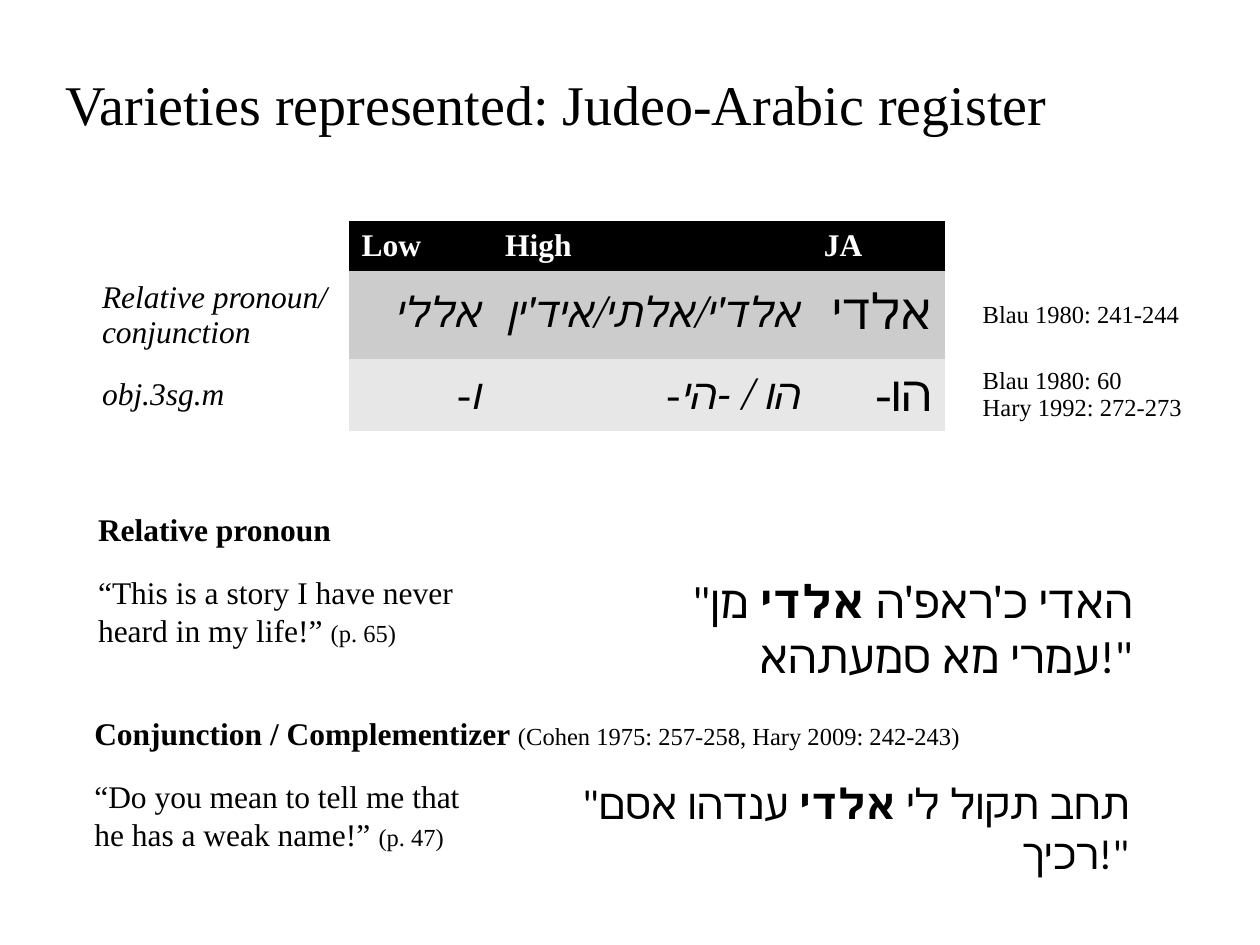
"""Build a slide on Judeo-Arabic register with a form table and two glossed examples."""
from pptx import Presentation
from pptx.dml.color import RGBColor
from pptx.enum import text
from pptx.util import Inches, Pt

BLACK = RGBColor(0x00, 0x00, 0x00)
WHITE = RGBColor(0xFF, 0xFF, 0xFF)
ROW_FILLS = [BLACK, RGBColor(0xCC, 0xCC, 0xCC), RGBColor(0xE7, 0xE7, 0xE7)]
SERIF, HEBREW = "Times New Roman", "Calibri"
LEFT, RIGHT = text.PP_ALIGN.LEFT, text.PP_ALIGN.RIGHT
NO_GRID_STYLE = "{2D5ABB26-0587-4C30-8999-92F81FD0307C}"

COLUMN_WIDTHS = [2.06, 1.14, 2.53, 1.06, 2.08]
ROW_HEIGHTS = [0.4, 0.7, 0.57]
FORMS = [
    ["", "Low", "High", "JA", ""],
    ["Relative pronoun/\nconjunction", "אללי", "אלד'י/אלתי/איד'ין", "אלדי", "Blau 1980: 241-244"],
    ["obj.3sg.m", "-ו", "-הו / -הי", "-הו", "Blau 1980: 60\nHary 1992: 272-273"],
]
COLUMN_STYLES = [
    dict(size=18, italic=True),
    dict(size=24, italic=True, align=RIGHT),
    dict(size=24, italic=True, align=RIGHT),
    dict(size=28, align=RIGHT),
    dict(size=14, indent=0.2),
]
HEADER_STYLE = dict(size=18, bold=True, color=WHITE)


def style_paragraph(paragraph, size, name=SERIF, bold=False, italic=False,
                    color=BLACK, align=LEFT, indent=0):
    """Set the shared font, alignment and left indent of a paragraph."""
    font = paragraph.font
    font.name, font.size, font.bold, font.italic = name, Pt(size), bold, italic
    font.color.rgb = color
    paragraph.alignment = align
    if indent:
        paragraph._p.get_or_add_pPr().set("marL", str(Inches(indent)))


def add_text(shapes, box, parts, **style):
    """Add a wrapping text box; each part is (text, size or None, bold or None)."""
    frame = shapes.add_textbox(*map(Inches, box)).text_frame
    frame.word_wrap = True
    frame.auto_size = text.MSO_AUTO_SIZE.SHAPE_TO_FIT_TEXT
    paragraph = frame.paragraphs[0]
    style_paragraph(paragraph, **style)
    for wording, size, bold in parts:
        run = paragraph.add_run()
        run.text = wording
        if size:
            run.font.size = Pt(size)
        if bold is not None:
            run.font.bold = bold


def fill_cell(cell, wording, style, fill):
    """Write a table cell, one paragraph a line, on its fill."""
    cell.vertical_anchor = text.MSO_ANCHOR.MIDDLE
    if fill is None:
        cell.fill.background()
    else:
        cell.fill.solid()
        cell.fill.fore_color.rgb = fill
    cell.text_frame.text = wording
    for paragraph in cell.text_frame.paragraphs:
        style_paragraph(paragraph, **style)


def add_forms_table(shapes):
    """Add the table of low, high and Judeo-Arabic forms."""
    forms = shapes.add_table(
        len(FORMS), len(COLUMN_WIDTHS), Inches(0.71), Inches(1.75),
        Inches(sum(COLUMN_WIDTHS)), Inches(sum(ROW_HEIGHTS))).table
    forms._tbl.tblPr.find("{*}tableStyleId").text = NO_GRID_STYLE
    forms.first_row = forms.horz_banding = False
    for column, width in zip(forms.columns, COLUMN_WIDTHS):
        column.width = Inches(width)
    for row, height in zip(forms.rows, ROW_HEIGHTS):
        row.height = Inches(height)
    for r, entries in enumerate(FORMS):
        for c, wording in enumerate(entries):
            style = COLUMN_STYLES[c] if r else HEADER_STYLE
            fill = ROW_FILLS[r] if 1 <= c <= 3 else None
            fill_cell(forms.cell(r, c), wording, style, fill)


def add_example(shapes, left, top, heading, heading_width, citation,
                translation, translation_width, page, hebrew, hebrew_box, hebrew_size):
    """Add a grouped example: Hebrew-script sentence, translation and heading."""
    group = shapes.add_group_shape().shapes
    before, after = hebrew
    hebrew_left, hebrew_width, hebrew_height = hebrew_box
    add_text(group, (hebrew_left, top + 0.5, hebrew_width, hebrew_height),
             [(before, None, None), ("אלדי", None, True), (after, None, None)],
             name=HEBREW, size=hebrew_size, align=RIGHT)
    add_text(group, (left, top + 0.5, translation_width, 0.71),
             [(translation, None, None), (page, 14, None)], size=18)
    heading_parts = [(heading, None, None)]
    if citation:
        heading_parts.append((citation, 14, False))
    add_text(group, (left, top, heading_width, 0.4), heading_parts, size=18, bold=True)


def main():
    """Build and save the slide."""
    deck = Presentation()
    deck.slide_width, deck.slide_height = Inches(10), Inches(7.5)
    shapes = deck.slides.add_slide(deck.slide_layouts[6]).shapes

    add_text(shapes, (0.42, 0.5, 9.08, 0.64),
             [("Varieties represented: Judeo-Arabic register", None, None)], size=32)
    add_forms_table(shapes)
    add_example(shapes, 0.68, 4, "Relative pronoun", 2.5, "",
                "“This is a story I have never heard in my life!” ", 3.41, "(p. 65)",
                ("\"האדי כ'ראפ'ה ", " מן עמרי מא סמעתהא!\""), (5.17, 3.92, 0.98), 26)
    add_example(shapes, 0.65, 5.62, "Conjunction / Complementizer ", 7.76,
                "(Cohen 1975: 257-258, Hary 2009: 242-243)",
                "“Do you mean to tell me that he has a weak name!” ", 3.35, "(p. 47)",
                ("\"תחב תקול לי ", " ענדהו אסם רכיך!\""), (4.25, 4.81, 0.5), 24)

    deck.save("out.pptx")


if __name__ == "__main__":
    main()
